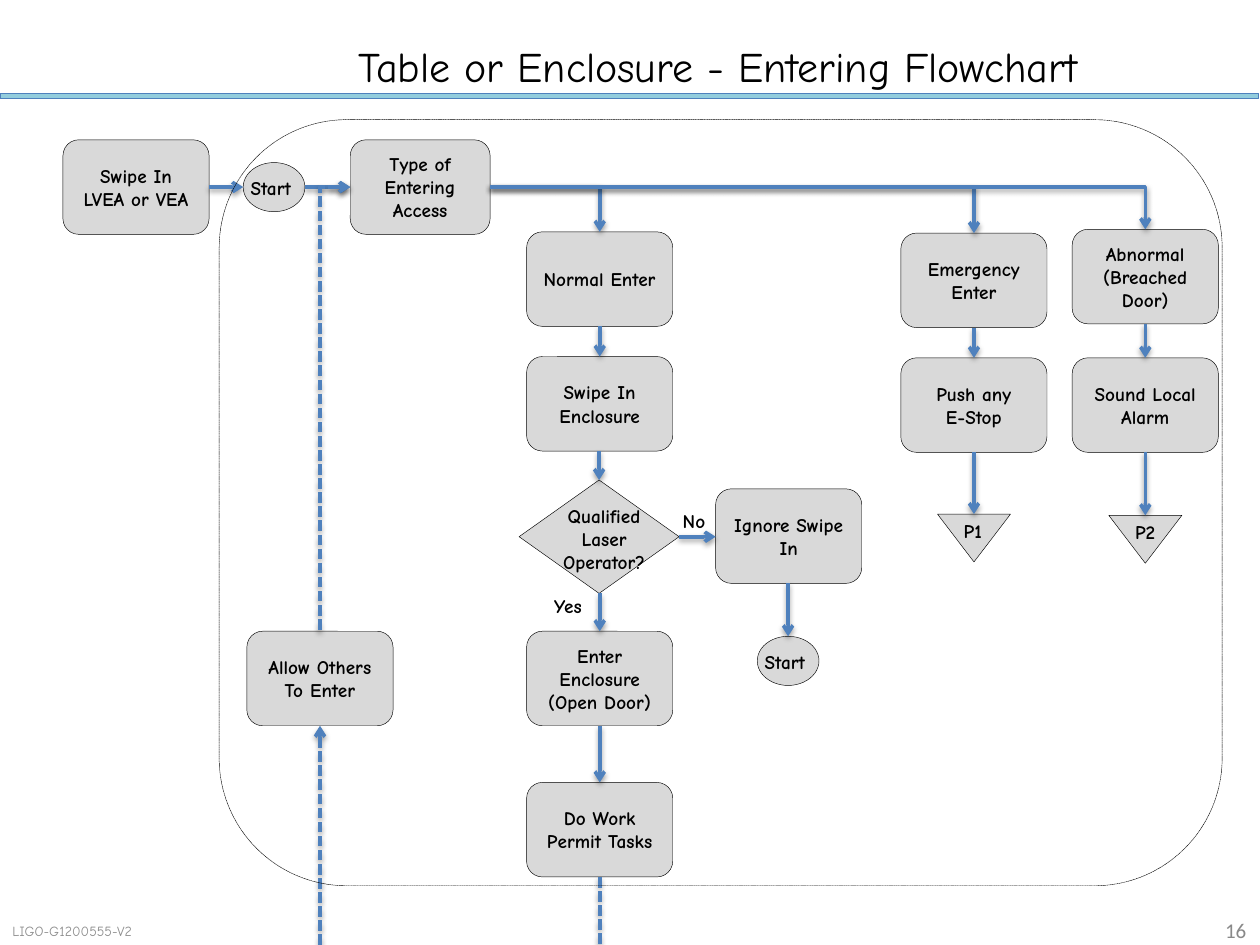
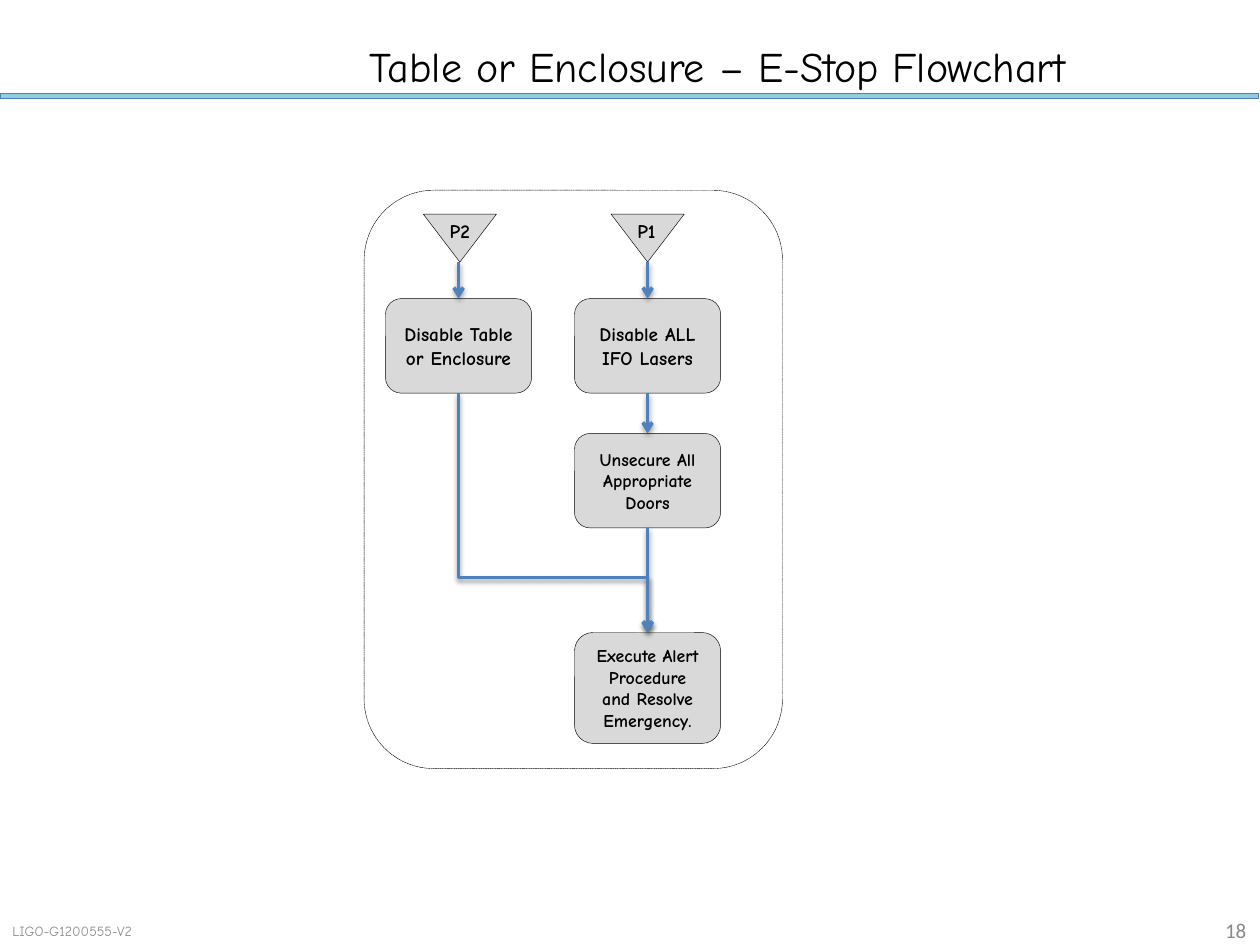
from itertools import pairwise

from lxml.etree import SubElement
from pptx import Presentation
from pptx.dml.color import RGBColor
from pptx.enum.dml import MSO_LINE
from pptx.enum.shapes import MSO_CONNECTOR, MSO_SHAPE
from pptx.enum.text import MSO_ANCHOR, PP_ALIGN
from pptx.oxml.ns import qn
from pptx.util import Inches, Pt

COLORS = {
    "ink": "000000",
    "step": "D9D9D9",
    "flow": "4F81BD",
    "band": "93CDDD",
    "page": "898989",
    "document": "8C8C8C",
}
FONT = "Comic Neue"
STEP_WIDTH, STEP_HEIGHT = 1.16, 0.75


def color(name):
    return RGBColor.from_string(COLORS[name])


def top(shape):
    return shape.left + shape.width // 2, shape.top


def bottom(shape):
    return shape.left + shape.width // 2, shape.top + shape.height


def left(shape):
    return shape.left, shape.top + shape.height // 2


def right(shape):
    return shape.left + shape.width, shape.top + shape.height // 2


class Flowchart:
    """Holds the presentation, the current slide and the shared style."""

    def __init__(self):
        self.deck = Presentation()
        self.deck.slide_width, self.deck.slide_height = Inches(10), Inches(7.5)

    def new_slide(self, title, page):
        self.slide = self.deck.slides.add_slide(self.deck.slide_layouts[6])
        self.shape(MSO_SHAPE.RECTANGLE, 0, 0.74, 9.99, 0.04, "band", "flow", 0.75)
        middle = MSO_ANCHOR.MIDDLE
        self.text(title, 1.89, 0.3, 7.61, 0.44, 24, align=PP_ALIGN.CENTER, anchor=middle)
        self.text(page, 9.26, 7.27, 0.73, 0.22, 12, "page", PP_ALIGN.RIGHT, middle,
                  font="Calibri")
        self.text("LIGO-G1200555-V2", 0, 7.29, 1.39, 0.2, 8, "document", anchor=middle)

    def fill_text(self, shape, text, size, ink="ink", align=PP_ALIGN.LEFT,
                  anchor=MSO_ANCHOR.TOP, font=FONT, bold=False, wrap=True):
        frame = shape.text_frame
        frame.text = text
        frame.word_wrap = wrap
        frame.vertical_anchor = anchor
        for paragraph in frame.paragraphs:
            paragraph.alignment = align
            paragraph.font.name = font
            paragraph.font.size = Pt(size)
            paragraph.font.bold = bold
            paragraph.font.color.rgb = color(ink)

    def text(self, text, x, y, width, height, size, *args, **style):
        box = self.slide.shapes.add_textbox(
            Inches(x), Inches(y), Inches(width), Inches(height))
        self.fill_text(box, text, size, *args, **style)

    def label(self, text, x, y, width, height=0.29, align=PP_ALIGN.LEFT):
        self.text(text, x, y, width, height, 11, align=align, bold=True, wrap=False)

    def shape(self, preset, x, y, width, height, fill="step", line="ink", weight=0.25):
        shape = self.slide.shapes.add_shape(
            preset, Inches(x), Inches(y), Inches(width), Inches(height))
        shape.shadow.inherit = False
        if fill:
            shape.fill.solid()
            shape.fill.fore_color.rgb = color(fill)
        else:
            shape.fill.background()
        shape.line.color.rgb = color(line)
        shape.line.width = Pt(weight)
        return shape

    def step(self, text, x, y, width=STEP_WIDTH, height=STEP_HEIGHT, size=11):
        box = self.shape(MSO_SHAPE.ROUNDED_RECTANGLE, x, y, width, height)
        self.fill_text(box, text, size, align=PP_ALIGN.CENTER, anchor=MSO_ANCHOR.MIDDLE,
                       bold=True)
        return box

    def start(self, x, y):
        oval = self.shape(MSO_SHAPE.OVAL, x, y, 0.49, 0.39)
        self.label("Start", x - 0.04, y + 0.06, 0.61)
        return oval

    def off_page(self, text, x, y):
        """Triangle that refers to another chart."""
        triangle = self.shape(MSO_SHAPE.FLOWCHART_MERGE, x, y, 0.58, 0.38)
        self.text(text, x + 0.11, y - 0.01, 0.52, 0.29, 11, bold=True)
        return triangle

    def frame(self, x, y, width, height):
        outline = self.shape(MSO_SHAPE.ROUNDED_RECTANGLE, x, y, width, height, fill=None)
        outline.line.dash_style = MSO_LINE.SQUARE_DOT

    def arrow(self, begin, end, kind=MSO_CONNECTOR.STRAIGHT, dashed=False, head="tailEnd"):
        """Connector with a soft shadow; head is tailEnd, headEnd or None."""
        link = self.slide.shapes.add_connector(kind, *begin, *end)
        link.line.color.rgb = color("flow")
        link.line.width = Pt(2)
        if dashed:
            link.line.dash_style = MSO_LINE.SQUARE_DOT
        properties = link._element.spPr
        if head:
            SubElement(properties.find(qn("a:ln")), qn(f"a:{head}"), type="arrow")
        effects = SubElement(properties, qn("a:effectLst"))
        shadow = SubElement(effects, qn("a:outerShdw"), blurRad=str(Pt(3.1)),
                            dist=str(Pt(1.6)), dir="5400000", rotWithShape="0")
        tint = SubElement(shadow, qn("a:srgbClr"), val=COLORS["ink"])
        SubElement(tint, qn("a:alpha"), val="38000")
        return link

    def corner(self, begin, end, **style):
        """One bend: across first, then up or down."""
        link = self.arrow(begin, end, MSO_CONNECTOR.ELBOW, **style)
        link._element.spPr.find(qn("a:prstGeom")).set("prst", "bentConnector2")

    def down_across_down(self, begin, end, bend):
        """Two bends, the first at the share bend of the height."""
        across, down = end[0] - begin[0], end[1] - begin[1]
        x = begin[0] + (across - down) // 2
        y = begin[1] + (down - across) // 2
        link = self.arrow((x, y), (x + down, y + across), MSO_CONNECTOR.ELBOW)
        properties = link._element.spPr
        turn = properties.find(qn("a:xfrm"))
        turn.set("rot", "16200000")
        turn.set("flipH", "1")
        geometry = properties.find(qn("a:prstGeom"))
        guides = geometry.find(qn("a:avLst"))
        if guides is None:
            guides = SubElement(geometry, qn("a:avLst"))
        SubElement(guides, qn("a:gd"), name="adj1", fmla=f"val {round(bend * 100000)}")

    def chain(self, *steps):
        """Arrows straight down from each step to the next."""
        for upper, lower in pairwise(steps):
            x, y = top(lower)
            self.arrow((x, bottom(upper)[1]), (x, y))

    def across(self, source, target):
        x, y = right(source)
        self.arrow((x, y), (left(target)[0], y))


def entering_slide(chart):
    chart.new_slide("Table or Enclosure - Entering Flowchart", "16")
    normal_x, emergency_x, abnormal_x = 4.18, 7.15, 8.51

    swipe_area = chart.step("Swipe In LVEA or VEA", 0.5, 1.11)
    begin = chart.start(1.93, 1.29)
    access = chart.step("Type of Entering Access", 2.78, 1.11, width=1.11)

    normal = chart.step("Normal Enter", normal_x, 1.84)
    swipe_enclosure = chart.step("Swipe In Enclosure", normal_x, 2.83)
    qualified = chart.shape(MSO_SHAPE.DIAMOND, 4.12, 3.81, 1.27, 0.9)
    chart.label("Qualified\nLaser\nOperator?", 4.31, 3.95, 0.97, 0.66, PP_ALIGN.CENTER)
    enter = chart.step("Enter Enclosure (Open Door)", normal_x, 5.01)
    work = chart.step("Do Work Permit Tasks", normal_x, 6.21)
    allow = chart.step("Allow Others To Enter", 1.96, 5.01)

    emergency = chart.step("Emergency Enter", emergency_x, 1.85)
    push = chart.step("Push any\nE-Stop", emergency_x, 2.84)
    to_p1 = chart.off_page("P1", 7.44, 4.08)

    abnormal = chart.step("Abnormal (Breached Door)", abnormal_x, 1.82)
    alarm = chart.step("Sound Local Alarm", abnormal_x, 2.84)
    to_p2 = chart.off_page("P2", 8.8, 4.09)

    ignore = chart.step("Ignore Swipe In", 5.68, 3.88)
    restart = chart.start(6.01, 5.05)
    chart.label("No", 5.32, 3.99, 0.41)
    chart.label("Yes", 4.3, 4.67, 0.46)

    chart.across(swipe_area, begin)
    chart.across(begin, access)
    chart.across(qualified, ignore)
    for entry in (normal, emergency, abnormal):
        chart.corner(right(access), top(entry))
    chart.chain(normal, swipe_enclosure, qualified, enter, work)
    chart.chain(emergency, push, to_p1)
    chart.chain(abnormal, alarm, to_p2)
    chart.chain(ignore, restart)

    chart.corner(left(access), top(allow), dashed=True, head="headEnd")
    slide_bottom = chart.deck.slide_height
    chart.arrow(bottom(work), (bottom(work)[0], slide_bottom), dashed=True, head=None)
    chart.arrow((bottom(allow)[0], slide_bottom), bottom(allow), dashed=True)
    chart.frame(1.74, 0.95, 7.96, 6.08)


def stop_slide(chart):
    chart.new_slide("Table or Enclosure – E-Stop Flowchart", "18")
    table_x, laser_x = 3.06, 4.56

    from_p1 = chart.off_page("P1", 4.85, 1.7)
    lasers = chart.step("Disable ALL IFO Lasers", laser_x, 2.37)
    doors = chart.step("Unsecure All Appropriate Doors", laser_x, 3.44, size=10.2)
    alert = chart.step("Execute Alert Procedure\nand Resolve Emergency.", laser_x, 5.02,
                       height=0.88, size=10.2)
    from_p2 = chart.off_page("P2", 3.36, 1.7)
    table = chart.step("Disable Table or Enclosure", table_x, 2.37)

    chart.chain(from_p1, lasers, doors, alert)
    chart.chain(from_p2, table)
    chart.down_across_down(bottom(table), top(alert), 0.77)
    chart.frame(2.89, 1.51, 3.32, 4.59)


def main():
    chart = Flowchart()
    entering_slide(chart)
    stop_slide(chart)
    chart.deck.save("out.pptx")


if __name__ == "__main__":
    main()
